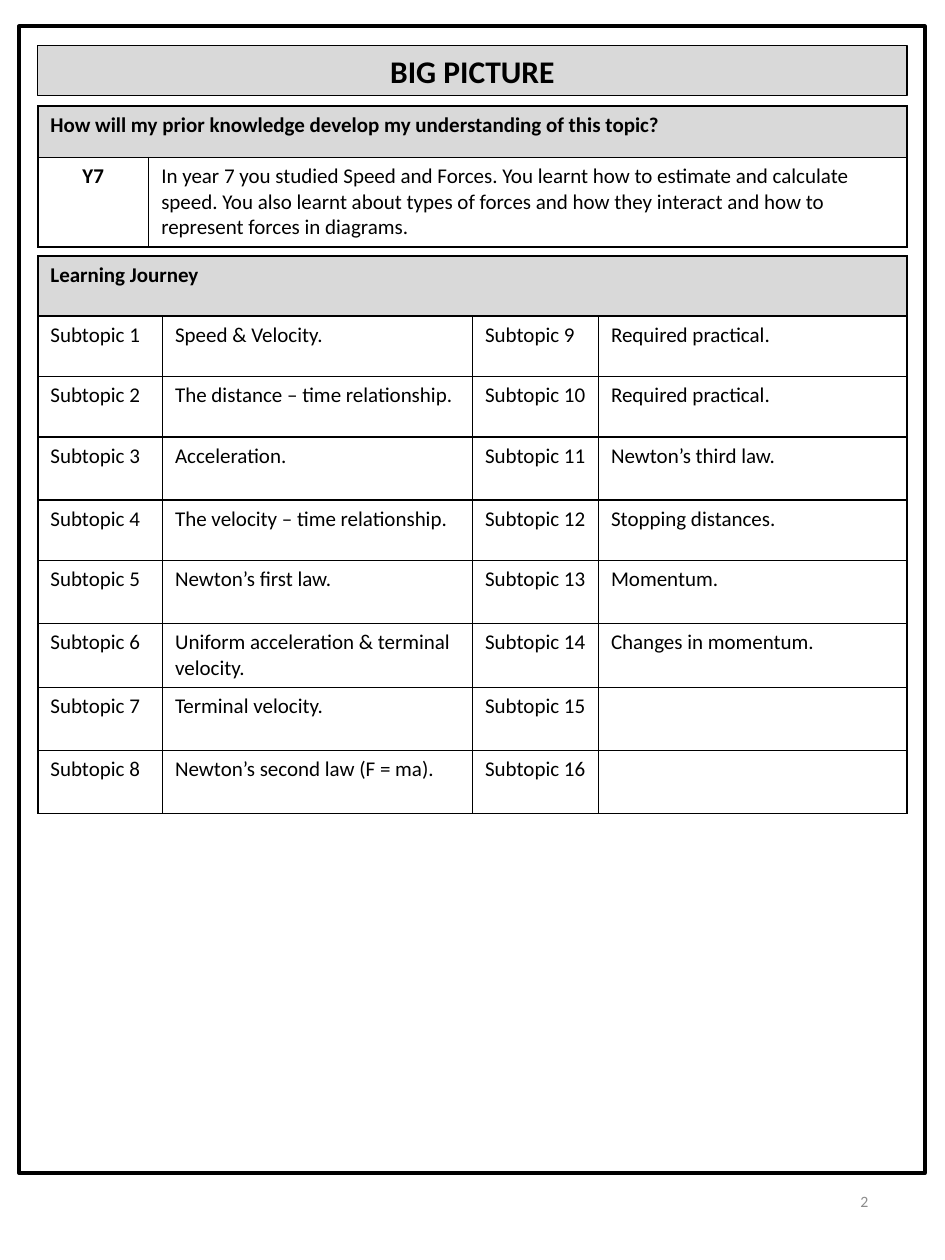
import pptx
import pptx.util
import pptx.dml.color
import pptx.enum.shapes
import pptx.enum.text
import lxml.etree
from pptx.util import Inches

TITLE = "BIG PICTURE"
PRIOR_QUESTION = "How will my prior knowledge develop my understanding of this topic?"
PRIOR_YEAR = "Y7"
PRIOR_SUMMARY = (
    "In year 7 you studied Speed and Forces. You learnt how to estimate and calculate "
    "speed. You also learnt about types of forces and how they interact and how to "
    "represent forces in diagrams."
)
JOURNEY_HEADING = "Learning Journey"
SUBTOPICS = [
    "Speed & Velocity.",
    "The distance – time relationship.",
    "Acceleration.",
    "The velocity – time relationship.",
    "Newton’s first law.",
    "Uniform acceleration & terminal velocity.",
    "Terminal velocity.",
    "Newton’s second law (F = ma).",
    "Required practical.",
    "Required practical.",
    "Newton’s third law.",
    "Stopping distances.",
    "Momentum.",
    "Changes in momentum.",
    "",
    "",
]
PAGE_NUMBER = "2"

THEME = {
    "font": "Calibri",
    "ink": "000000",
    "band": "D9D9D9",
    "paper": "FFFFFF",
    "muted": "8C8C8C",
    "title": 18,
    "body": 12,
    "footer": 9,
}
LEFT, WIDTH = 0.3, 6.9
PRIOR_COLUMNS = [0.88, 6.02]
JOURNEY_COLUMNS = [0.99, 2.46, 1, 2.45]
ALIGN = pptx.enum.text.PP_ALIGN


def color(name):
    return pptx.dml.color.RGBColor.from_string(THEME[name])


def write(frame, text, size="body", bold=False, ink="ink", align=ALIGN.LEFT):
    para = frame.paragraphs[0]
    para.alignment = align
    if not text:
        para.font.size = pptx.util.Pt(THEME[size])
        return
    span = para.add_run()
    span.text = text
    span.font.name = THEME["font"]
    span.font.size = pptx.util.Pt(THEME[size])
    span.font.bold = bold
    span.font.color.rgb = color(ink)


def add_box(page, left, top, width, height, line_width, fill=None):
    box = page.shapes.add_shape(
        pptx.enum.shapes.MSO_SHAPE.RECTANGLE,
        Inches(left), Inches(top), Inches(width), Inches(height),
    )
    box.shadow.inherit = False
    if fill:
        box.fill.solid()
        box.fill.fore_color.rgb = color(fill)
    else:
        box.fill.background()
    box.line.color.rgb = color("ink")
    box.line.width = pptx.util.Pt(line_width)
    return box


def add_borders(cell):
    properties = cell._tc.get_or_add_tcPr()
    namespace = pptx.oxml.ns.nsdecls("a")
    for index, side in enumerate(("lnL", "lnR", "lnT", "lnB")):
        border = pptx.oxml.parse_xml(
            f'<a:{side} {namespace} w="{pptx.util.Pt(1)}"><a:solidFill>'
            f'<a:srgbClr val="{THEME["ink"]}"/></a:solidFill></a:{side}>'
        )
        properties.insert(index, border)


def add_grid(page, top, columns, heights, rows, heading=None, fill=None):
    table = page.shapes.add_table(
        len(heights), len(columns),
        Inches(LEFT), Inches(top), Inches(WIDTH), Inches(sum(heights)),
    ).table
    table.first_row = False
    table.horz_banding = False
    for column, width in zip(table.columns, columns):
        column.width = Inches(width)
    for row, height in zip(table.rows, heights):
        row.height = Inches(height)
    for cell in table.iter_cells():
        if fill:
            cell.fill.solid()
            cell.fill.fore_color.rgb = color(fill)
        else:
            cell.fill.background()
        add_borders(cell)
    first = 0
    if heading:
        first = 1
        header = table.cell(0, 0)
        header.merge(table.cell(0, len(columns) - 1))
        header.fill.solid()
        header.fill.fore_color.rgb = color("band")
        write(header.text_frame, heading, bold=True)
    for row_index, row in enumerate(rows, first):
        for column_index, (text, style) in enumerate(row):
            write(table.cell(row_index, column_index).text_frame, text, **style)


def journey_rows():
    half = len(SUBTOPICS) // 2
    labelled = [
        [(f"Subtopic {number}", {}), (topic, {})]
        for number, topic in enumerate(SUBTOPICS, 1)
    ]
    return [left + right for left, right in zip(labelled[:half], labelled[half:])]


def main():
    deck = pptx.Presentation()
    deck.slide_width, deck.slide_height = Inches(7.5), Inches(10)
    page = deck.slides.add_slide(deck.slide_layouts[6])

    add_box(page, 0.15, 0.21, 7.19, 9.1, 2.25)
    banner = add_box(page, LEFT, 0.36, WIDTH, 0.4, 0.75, "band")
    write(banner.text_frame, TITLE, "title", bold=True, align=ALIGN.CENTER)

    prior_row = [
        (PRIOR_YEAR, {"bold": True, "align": ALIGN.CENTER}),
        (PRIOR_SUMMARY, {}),
    ]
    add_grid(page, 0.84, PRIOR_COLUMNS, [0.41, 0.7], [prior_row], PRIOR_QUESTION, "paper")

    rows = journey_rows()
    add_grid(page, 2.03, JOURNEY_COLUMNS, [0.48, 0.48, 0.48, 0.5, 0.48], rows[:4], JOURNEY_HEADING)
    add_grid(page, 4.45, JOURNEY_COLUMNS, [0.5] * 4, rows[4:])

    footer = page.shapes.add_textbox(Inches(5.3), Inches(9.27), Inches(1.69), Inches(0.53))
    footer.text_frame.word_wrap = True
    footer.text_frame.vertical_anchor = pptx.enum.text.MSO_ANCHOR.MIDDLE
    write(footer.text_frame, PAGE_NUMBER, "footer", ink="muted", align=ALIGN.RIGHT)

    deck.save("out.pptx")


if __name__ == "__main__":
    main()
